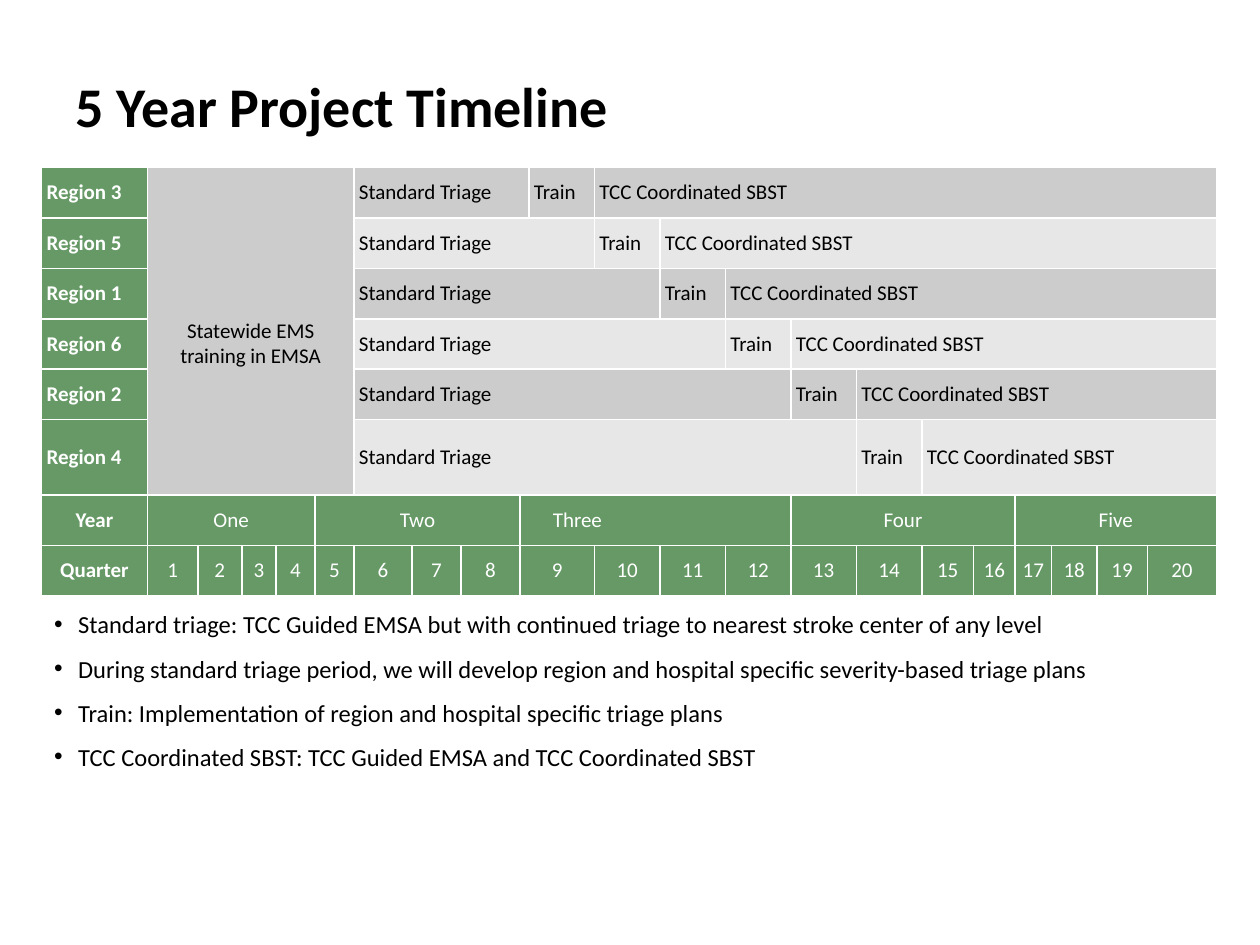
from dataclasses import dataclass

import pptx
import pptx.dml.color
import pptx.enum.text
import pptx.oxml
import pptx.oxml.ns
import pptx.util
from pptx.util import Inches

ALIGN = pptx.enum.text.PP_ALIGN
ANCHOR = pptx.enum.text.MSO_ANCHOR


@dataclass(frozen=True)
class Theme:
    font: str = "Calibri"
    text: str = "000000"
    light_text: str = "FFFFFF"
    border: str = "FFFFFF"
    header: str = "669966"
    bands: tuple[str, str] = ("CCCCCC", "E7E7E7")
    title_size: int = 32
    table_size: int = 12
    list_size: int = 14


@dataclass(frozen=True)
class Block:
    """A table entry from one grid corner to the other, both included."""
    text: str
    row: int
    column: int
    last_column: int
    fill: str
    color: str
    bold: bool = False
    align: ALIGN = ALIGN.LEFT
    last_row: int | None = None
    margin_top: float = 0
    margin_right: float = 0.04


THEME = Theme()
REGIONS = ["Region 3", "Region 5", "Region 1", "Region 6", "Region 2", "Region 4"]
YEARS = [("One", 1, 4), ("Two", 5, 8), ("Three", 9, 13), ("Four", 14, 17), ("Five", 18, 21)]
COLUMN_WIDTHS = [0.84, 0.4, 0.35, 0.27, 0.31, 0.31, 0.46, 0.39, 0.47, 0.07,
                 *[0.52] * 6, 0.41, 0.33, 0.29, 0.36, 0.4, 0.55]
ROW_HEIGHTS = [*[0.4] * 5, 0.6, 0.4, 0.4]
LAST_COLUMN = len(COLUMN_WIDTHS) - 1
YEAR_ROW = len(REGIONS)
QUARTER_ROW = YEAR_ROW + 1
FIRST_TRIAGE_COLUMN = 6
FIRST_TRAIN_COLUMN = 10
NOTES = [
    "Standard triage: TCC Guided EMSA but with continued triage to nearest stroke center of any level",
    "During standard triage period, we will develop region and hospital specific severity-based triage plans",
    "Train: Implementation of region and hospital specific triage plans",
    "TCC Coordinated SBST: TCC Guided EMSA and TCC Coordinated SBST",
]


def apply_format(target, values: dict) -> None:
    for name, value in values.items():
        setattr(target, name, value)


def place(shape, left: float, top: float, width: float, height: float) -> None:
    apply_format(shape, {"left": Inches(left), "top": Inches(top),
                         "width": Inches(width), "height": Inches(height)})


def add_text(paragraph, text: str, size: int, color: str, bold: bool = False) -> None:
    run = paragraph.add_run()
    run.text = text
    apply_format(run.font, {"name": THEME.font, "size": pptx.util.Pt(size), "bold": bold})
    run.font.color.rgb = pptx.dml.color.RGBColor.from_string(color)


def add_borders(cell) -> None:
    properties = cell._tc.get_or_add_tcPr()
    for side in ("lnL", "lnR", "lnT", "lnB"):
        properties.append(pptx.oxml.parse_xml(
            f'<a:{side} {pptx.oxml.ns.nsdecls("a")} w="12700"><a:solidFill>'
            f'<a:srgbClr val="{THEME.border}"/></a:solidFill></a:{side}>'))


def header_block(text: str, row: int, column: int, last_column: int, **options) -> Block:
    return Block(text, row, column, last_column, THEME.header, THEME.light_text, **options)


def timeline_blocks() -> list[Block]:
    blocks = [Block("Statewide EMS training in EMSA", 0, 1, FIRST_TRIAGE_COLUMN - 1,
                    THEME.bands[0], THEME.text, align=ALIGN.CENTER,
                    last_row=YEAR_ROW - 1, margin_top=0.2)]
    for row, region in enumerate(REGIONS):
        train = FIRST_TRAIN_COLUMN + row
        blocks.append(header_block(region, row, 0, 0, bold=True))
        for text, first, last in (("Standard Triage", FIRST_TRIAGE_COLUMN, train - 1),
                                  ("Train", train, train),
                                  ("TCC Coordinated SBST", train + 1, LAST_COLUMN)):
            blocks.append(Block(text, row, first, last, THEME.bands[row % 2], THEME.text))
    for text, row in (("Year", YEAR_ROW), ("Quarter", QUARTER_ROW)):
        blocks.append(header_block(text, row, 0, 0, bold=True, align=ALIGN.CENTER))
    for year, first, last in YEARS:
        blocks.append(header_block(year, YEAR_ROW, first, last, align=ALIGN.CENTER,
                                   margin_right=1.28 if year == "Three" else 0.04))
    for quarter in range(1, 21):
        # Quarter 9 covers two columns, so later quarters sit one column on.
        first, last = quarter + (quarter > 9), quarter + (quarter >= 9)
        blocks.append(header_block(str(quarter), QUARTER_ROW, first, last, align=ALIGN.CENTER))
    return blocks


def draw_block(table, block: Block) -> None:
    last_row = block.row if block.last_row is None else block.last_row
    cell = table.cell(block.row, block.column)
    if (last_row, block.last_column) != (block.row, block.column):
        cell.merge(table.cell(last_row, block.last_column))
    for row in range(block.row, last_row + 1):
        for column in range(block.column, block.last_column + 1):
            part = table.cell(row, column)
            add_borders(part)
            part.fill.solid()
            part.fill.fore_color.rgb = pptx.dml.color.RGBColor.from_string(block.fill)
            apply_format(part, {"margin_left": Inches(0.04), "margin_bottom": 0,
                                "margin_top": Inches(block.margin_top),
                                "margin_right": Inches(block.margin_right),
                                "vertical_anchor": ANCHOR.MIDDLE})
    paragraph = cell.text_frame.paragraphs[0]
    paragraph.alignment = block.align
    add_text(paragraph, block.text, THEME.table_size, block.color, block.bold)


def draw_timeline(slide) -> None:
    table = slide.shapes.add_table(
        len(ROW_HEIGHTS), len(COLUMN_WIDTHS), Inches(0.33), Inches(1.33),
        Inches(sum(COLUMN_WIDTHS)), Inches(sum(ROW_HEIGHTS))).table
    apply_format(table, {"first_row": False, "horz_banding": False})
    for column, width in zip(table.columns, COLUMN_WIDTHS):
        column.width = Inches(width)
    for row, height in zip(table.rows, ROW_HEIGHTS):
        row.height = Inches(height)
    for block in timeline_blocks():
        draw_block(table, block)


def draw_title(shape) -> None:
    place(shape, 0.5, 0.5, 9, 0.67)
    shape.text_frame.vertical_anchor = ANCHOR.MIDDLE
    paragraph = shape.text_frame.paragraphs[0]
    paragraph.alignment = ALIGN.LEFT
    add_text(paragraph, "5 Year Project Timeline", THEME.title_size, THEME.text, bold=True)


def draw_notes(shape) -> None:
    place(shape, 0.33, 4.67, 8.44, 1.82)
    frame = shape.text_frame
    apply_format(frame, {"word_wrap": False, "vertical_anchor": ANCHOR.TOP,
                         "auto_size": pptx.enum.text.MSO_AUTO_SIZE.SHAPE_TO_FIT_TEXT})
    for index, note in enumerate(NOTES):
        paragraph = frame.add_paragraph() if index else frame.paragraphs[0]
        properties = paragraph._p.get_or_add_pPr()
        properties.set("marL", str(Inches(0.19)))
        properties.set("indent", str(-Inches(0.19)))
        properties.append(pptx.oxml.parse_xml(
            f'<a:buChar {pptx.oxml.ns.nsdecls("a")} char="•"/>'))
        apply_format(paragraph, {"line_spacing": 1.5, "space_before": pptx.util.Pt(0),
                                 "alignment": ALIGN.LEFT})
        add_text(paragraph, note, THEME.list_size, THEME.text)


def main() -> None:
    presentation = pptx.Presentation()
    apply_format(presentation, {"slide_width": Inches(10), "slide_height": Inches(7.5)})
    slide = presentation.slides.add_slide(presentation.slide_layouts[1])
    draw_title(slide.shapes.title)
    draw_timeline(slide)
    draw_notes(slide.placeholders[1])
    presentation.save("out.pptx")


if __name__ == "__main__":
    main()
